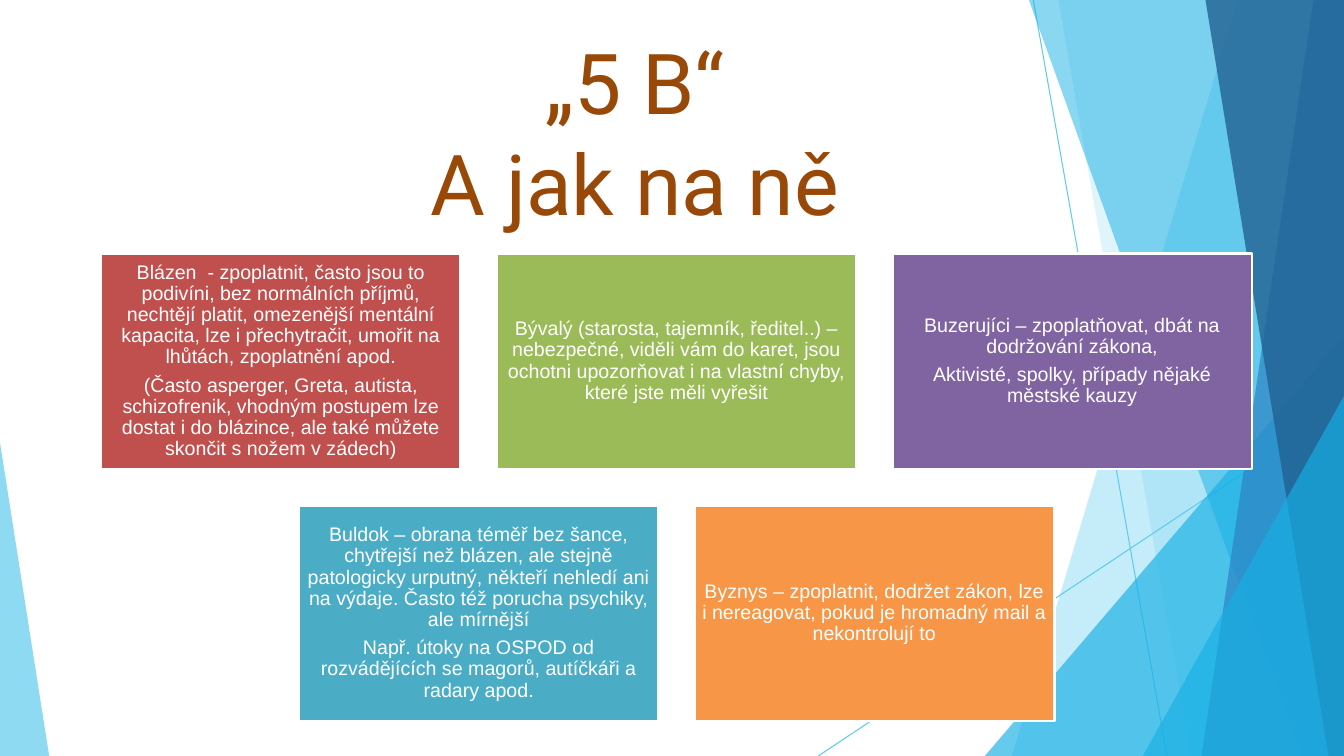
from lxml import etree
from pptx import Presentation
from pptx.dml.color import RGBColor
from pptx.enum.shapes import MSO_CONNECTOR, MSO_SHAPE
from pptx.enum.text import MSO_ANCHOR, PP_ALIGN
from pptx.oxml.ns import qn
from pptx.util import Cm, Pt

RECTANGLE, TRIANGLE = MSO_SHAPE.RECTANGLE, MSO_SHAPE.ISOSCELES_TRIANGLE
STRAIGHT = MSO_CONNECTOR.STRAIGHT
MIDDLE, TOP = MSO_ANCHOR.MIDDLE, MSO_ANCHOR.TOP
CENTER = PP_ALIGN.CENTER

WHITE = RGBColor(0xFF, 0xFF, 0xFF)
BROWN = RGBColor(0x98, 0x48, 0x07)
RED = RGBColor(0xC0, 0x50, 0x4D)
GREEN = RGBColor(0x9B, 0xBB, 0x59)
PURPLE = RGBColor(0x80, 0x64, 0xA2)
TEAL = RGBColor(0x4B, 0xAC, 0xC6)
ORANGE = RGBColor(0xF7, 0x96, 0x46)
SKY = RGBColor(0x5F, 0xCB, 0xEF)
CYAN = RGBColor(0x17, 0xB0, 0xE4)
BLUE = RGBColor(0x2E, 0x83, 0xC3)
NAVY = RGBColor(0x22, 0x62, 0x92)

# Content
TITLE = ["„5 B“", "A jak na ně"]
CARD_ROWS = [
    [
        (RED, ["Blázen  - zpoplatnit, často jsou to podivíni, bez normálních příjmů, "
               "nechtějí platit, omezenější mentální kapacita, lze i přechytračit, "
               "umořit na lhůtách, zpoplatnění apod.",
               "(Často asperger, Greta, autista, schizofrenik, vhodným postupem lze "
               "dostat i do blázince, ale také můžete skončit s nožem v zádech)"]),
        (GREEN, ["Bývalý (starosta, tajemník, ředitel..) – nebezpečné, viděli vám do "
                 "karet, jsou ochotni upozorňovat i na vlastní chyby, které jste měli "
                 "vyřešit"]),
        (PURPLE, ["Buzerujíci – zpoplatňovat, dbát na dodržování zákona,",
                  "Aktivisté, spolky, případy nějaké městské kauzy"]),
    ],
    [
        (TEAL, ["Buldok – obrana téměř bez šance, chytřejší než blázen, ale stejně "
                "patologicky urputný, někteří nehledí ani na výdaje. Často též porucha "
                "psychiky, ale mírnější",
                "Např. útoky na OSPOD od rozvádějících se magorů, autíčkáři a radary "
                "apod."]),
        (ORANGE, ["Byznys – zpoplatnit, dodržet zákon, lze i nereagovat, pokud je "
                  "hromadný mail a nekontrolují to"]),
    ],
]

# Layout, in centimetres
SLIDE_W, SLIDE_H = 33.87, 19.05
CARD_W, CARD_H = 9.07, 5.44
CARD_STEP_X, CARD_STEP_Y = 9.97, 6.35
CARDS_MIDDLE, CARDS_TOP = 17.05, 6.38

# Background: thin lines (start, end), then facets from back to front
RAYS = [((26.04, 0), (29.41, SLIDE_H)), ((SLIDE_W, 10.24), (20.62, SLIDE_H))]
# band: left edge at the top and at the bottom, reaching the right slide edge
# triangle: left, top, width, apex position; standing on the bottom slide edge
FACETS = [
    ("band", (31.19, 25.5), SKY, 36),
    ("band", (26.67, 30.02), SKY, 20),
    ("triangle", (24.82, 8.46, 9.05, 1), CYAN, 66),
    ("band", (25.93, 32.79), CYAN, 50),
    ("band", (33.1, 30.28), BLUE, 70),
    ("band", (30.38, 33.48), NAVY, 80),
    ("triangle", (28.8, 9.98, 5.07, 1), CYAN, 66),
    ("triangle", (0, 11.15, 1.24, 0), SKY, 70),
]

prs = Presentation()
prs.slide_width, prs.slide_height = Cm(SLIDE_W), Cm(SLIDE_H)
slide = prs.slides.add_slide(prs.slide_layouts[6])
shapes = slide.shapes


def add_band(top_left, bottom_left):
    builder = shapes.build_freeform(Cm(top_left), 0)
    corners = [(SLIDE_W, 0), (SLIDE_W, SLIDE_H), (bottom_left, SLIDE_H)]
    builder.add_line_segments([(Cm(x), Cm(y)) for x, y in corners], close=True)
    return builder.convert_to_shape()


def add_triangle(left, top, width, apex):
    triangle = shapes.add_shape(TRIANGLE, Cm(left), Cm(top), Cm(width), Cm(SLIDE_H - top))
    triangle.adjustments[0] = apex
    return triangle


def paint(shape, color, opacity=100):
    shape.shadow.inherit = False
    shape.fill.solid()
    shape.fill.fore_color.rgb = color
    if opacity < 100:
        tint = shape.fill._xPr.find(qn("a:solidFill"))[0]
        etree.SubElement(tint, qn("a:alpha")).set("val", str(opacity * 1000))


def write(frame, texts, font_name, size, color, anchor, line_spacing=None, gap=None):
    frame.word_wrap = True
    frame.vertical_anchor = anchor
    for i, text in enumerate(texts):
        paragraph = frame.paragraphs[0] if i == 0 else frame.add_paragraph()
        paragraph.alignment = CENTER
        paragraph.line_spacing = line_spacing
        paragraph.space_after = gap
        run = paragraph.add_run()
        run.text = text
        run.font.name, run.font.size = font_name, Pt(size)
        run.font.color.rgb = color


# Background
for (x1, y1), (x2, y2) in RAYS:
    ray = shapes.add_connector(STRAIGHT, Cm(x1), Cm(y1), Cm(x2), Cm(y2))
    ray.line.color.rgb, ray.line.width = SKY, Pt(0.75)
    etree.SubElement(ray._element.spPr, qn("a:effectLst"))

for kind, geometry, color, opacity in FACETS:
    facet = add_band(*geometry) if kind == "band" else add_triangle(*geometry)
    paint(facet, color, opacity)
    facet.line.fill.background()

# Title
title = shapes.add_textbox(Cm(1.88), Cm(0.64), Cm(28.24), Cm(4.72))
write(title.text_frame, TITLE, "Roboto", 60, BROWN, TOP)

# Cards, each row centred
for row, cards in enumerate(CARD_ROWS):
    row_width = (len(cards) - 1) * CARD_STEP_X + CARD_W
    row_left = CARDS_MIDDLE - row_width / 2
    for column, (color, texts) in enumerate(cards):
        card = shapes.add_shape(RECTANGLE, Cm(row_left + column * CARD_STEP_X),
                                Cm(CARDS_TOP + row * CARD_STEP_Y), Cm(CARD_W), Cm(CARD_H))
        paint(card, color)
        card.line.color.rgb, card.line.width = WHITE, Pt(2)
        frame = card.text_frame
        frame.margin_left = frame.margin_right = Cm(0.15)
        frame.margin_top = frame.margin_bottom = Cm(0.15)
        write(frame, texts, "Arial", 14, WHITE, MIDDLE, 0.9, Pt(5))

prs.save("out.pptx")
